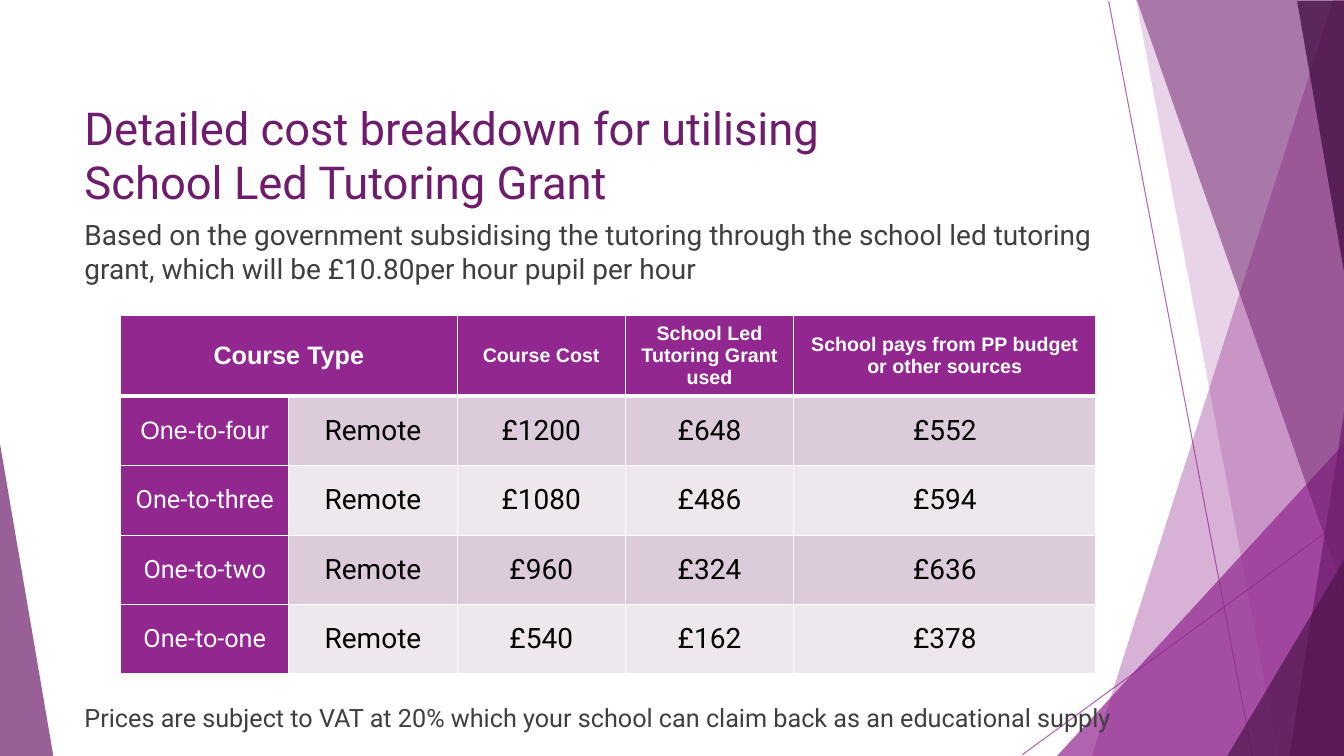
from dataclasses import dataclass
from typing import Any

from lxml.etree import SubElement
from pptx import Presentation
from pptx.dml.color import RGBColor
from pptx.enum.shapes import MSO_CONNECTOR as Link, MSO_SHAPE as Preset
from pptx.enum.text import MSO_ANCHOR as Anchor, PP_ALIGN as Align
from pptx.oxml.ns import qn
from pptx.util import Cm, Pt

WHITE = RGBColor(0xFF, 0xFF, 0xFF)
BLACK = RGBColor(0x00, 0x00, 0x00)
CHARCOAL = RGBColor(0x3F, 0x3F, 0x3F)
PURPLE = RGBColor(0x92, 0x27, 0x8F)
PLUM = RGBColor(0x6D, 0x1D, 0x6B)
AUBERGINE = RGBColor(0x49, 0x13, 0x47)
BANDS = (RGBColor(0xDB, 0xCB, 0xDB), RGBColor(0xEE, 0xE7, 0xEE))

SHARD_HEIGHT = 19.08


@dataclass(frozen=True)
class Ray:
    start: tuple[float, float]
    end: tuple[float, float]


@dataclass(frozen=True)
class Shard:
    """Four-sided panel with an upright right edge."""
    top_left: float
    right: float
    bottom_left: float
    color: RGBColor
    opacity: int
    top: float = 0


@dataclass(frozen=True)
class Wedge:
    """Right-angled triangle; apex is 0 at the left and 1 at the right."""
    left: float
    top: float
    width: float
    height: float
    color: RGBColor
    opacity: int
    apex: int = 1


RAYS = (
    Ray((27.94, 0.03), (31.57, 19.08)),
    Ray((36.47, 11.18), (25.76, 19.02)),
)
# From back to front
PANELS = (
    Shard(33.6, 36.47, 27.51, PURPLE, 36),
    Shard(28.63, 36.35, 32.23, PURPLE, 20),
    Wedge(26.62, 8.48, 9.73, 10.59, PURPLE, 72),
    Shard(28.65, 36.37, 35.33, PLUM, 50),
    Shard(35.53, 36.32, 32.49, PLUM, 70),
    Shard(32.69, 36.4, 35.99, AUBERGINE, 80, top=0.03),
    Wedge(30.91, 10.01, 5.41, 9.07, AUBERGINE, 66),
    Wedge(0, 11.18, 1.35, 7.9, PLUM, 70, apex=0),
)

TITLE = ("Detailed cost breakdown for utilising", "School Led Tutoring Grant")
BASIS = ("Based on the government subsidising the tutoring through the school led "
         "tutoring grant, which will be £10.80per hour pupil per hour")
VAT_NOTE = ("Prices are subject to VAT at 20% which your school can claim back "
            "as an educational supply")
COSTS = (
    ("Course Type", "", "Course Cost", "School Led Tutoring Grant used",
     "School pays from PP budget or other sources"),
    ("One-to-four", "Remote", "£1200", "£648", "£552"),
    ("One-to-three", "Remote", "£1080", "£486", "£594"),
    ("One-to-two", "Remote", "£960", "£324", "£636"),
    ("One-to-one", "Remote", "£540", "£162", "£378"),
)
COLUMN_WIDTHS = (4.24, 4.24, 4.24, 4.24, 7.62)
ROW_HEIGHTS = (1.88, 1.75, 1.75, 1.75, 1.75)

TITLE_FONT = {"name": "Roboto", "size": Pt(32.4)}
BASIS_FONT = {"name": "Roboto", "size": Pt(20)}
NOTE_FONT = {"name": "Roboto", "size": Pt(18)}
HEADER_FONT = {"name": "Arial", "size": Pt(14), "bold": True}
COURSE_TYPE_FONT = HEADER_FONT | {"size": Pt(18)}
FIRST_COURSE_FONT = {"name": "Arial", "size": Pt(18), "bold": False}
COURSE_FONT = {"name": "Roboto", "size": Pt(18), "bold": False}
VALUE_FONT = {"name": "Roboto", "size": Pt(20), "bold": False}


def set_font(font: Any, values: dict[str, Any], color: RGBColor) -> None:
    for attribute, value in values.items():
        setattr(font, attribute, value)
    font.color.rgb = color


def set_opacity(shape: Any, percent: int) -> None:
    for color in shape._element.iter(qn("a:srgbClr")):
        SubElement(color, qn("a:alpha"), val=str(percent * 1000))


def draw_ray(slide: Any, ray: Ray) -> None:
    line = slide.shapes.add_connector(
        Link.STRAIGHT, *(Cm(value) for value in (*ray.start, *ray.end)))
    line.line.color.rgb = PURPLE
    line.line.width = Pt(0.75)
    SubElement(line._element.spPr, qn("a:effectLst"))
    set_opacity(line, 70)


def draw_panel(slide: Any, panel: Shard | Wedge) -> None:
    if isinstance(panel, Wedge):
        shape = slide.shapes.add_shape(
            Preset.ISOSCELES_TRIANGLE, Cm(panel.left), Cm(panel.top),
            Cm(panel.width), Cm(panel.height))
        shape.adjustments[0] = panel.apex
    else:
        bottom = Cm(panel.top + SHARD_HEIGHT)
        outline = slide.shapes.build_freeform(Cm(panel.top_left), Cm(panel.top))
        outline.add_line_segments([
            (Cm(panel.right), Cm(panel.top)), (Cm(panel.right), bottom),
            (Cm(panel.bottom_left), bottom)])
        shape = outline.convert_to_shape()
    shape.shadow.inherit = False
    shape.fill.solid()
    shape.fill.fore_color.rgb = panel.color
    shape.line.fill.background()
    set_opacity(shape, panel.opacity)


def add_text_frame(slide: Any, left: float, top: float,
                   width: float, height: float) -> Any:
    frame = slide.shapes.add_textbox(Cm(left), Cm(top), Cm(width), Cm(height)).text_frame
    frame.word_wrap = True
    return frame


def set_borders(cell: Any, bottom: float) -> None:
    properties = cell._tc.get_or_add_tcPr()
    widths = {"a:lnL": 1, "a:lnR": 1, "a:lnT": 1, "a:lnB": bottom}
    for position, (side, width) in enumerate(widths.items()):
        border = SubElement(properties, qn(side), w=str(Pt(width)))
        fill = SubElement(border, qn("a:solidFill"))
        SubElement(fill, qn("a:srgbClr"), val=str(WHITE))
        properties.insert(position, border)


def cell_look(row: int, column: int) -> tuple[dict[str, Any], RGBColor, RGBColor]:
    if row == 0:
        return (HEADER_FONT if column else COURSE_TYPE_FONT), WHITE, PURPLE
    if column == 0:
        return (FIRST_COURSE_FONT if row == 1 else COURSE_FONT), WHITE, PURPLE
    return VALUE_FONT, BLACK, BANDS[(row - 1) % 2]


def draw_costs(slide: Any) -> None:
    costs = slide.shapes.add_table(
        len(COSTS), len(COLUMN_WIDTHS), Cm(3.04), Cm(7.95),
        Cm(sum(COLUMN_WIDTHS)), Cm(sum(ROW_HEIGHTS))).table
    for column, width in zip(costs.columns, COLUMN_WIDTHS):
        column.width = Cm(width)
    for row, height in zip(costs.rows, ROW_HEIGHTS):
        row.height = Cm(height)
    for row, entries in enumerate(COSTS):
        for column, entry in enumerate(entries):
            cell = costs.cell(row, column)
            font, color, fill = cell_look(row, column)
            cell.fill.solid()
            cell.fill.fore_color.rgb = fill
            set_borders(cell, bottom=1 if row else 3)
            cell.vertical_anchor = Anchor.MIDDLE
            paragraph = cell.text_frame.paragraphs[0]
            paragraph.alignment = Align.CENTER
            if entry:
                run = paragraph.add_run()
                run.text = entry
                set_font(run.font, font, color)
    costs.cell(0, 0).merge(costs.cell(0, 1))


def main() -> None:
    deck = Presentation()
    deck.slide_width, deck.slide_height = Cm(33.87), Cm(19.05)
    slide = deck.slides.add_slide(deck.slide_layouts[6])

    # Angled backdrop
    for ray in RAYS:
        draw_ray(slide, ray)
    for panel in PANELS:
        draw_panel(slide, panel)

    # Title on two lines
    heading = add_text_frame(slide, 1.88, 2.39, 30.84, 2.29).paragraphs[0]
    for number, words in enumerate(TITLE):
        if number:
            heading.add_line_break()
        run = heading.add_run()
        run.text = words
        set_font(run.font, TITLE_FONT, PLUM)

    # Basis above the table and VAT note below it
    body = add_text_frame(slide, 1.88, 5.36, 26.87, 14.22)
    basis, vat_note = body.paragraphs[0], body.add_paragraph()
    vat_note.space_before = Pt(298)
    for paragraph, words, font in ((basis, BASIS, BASIS_FONT),
                                   (vat_note, VAT_NOTE, NOTE_FONT)):
        run = paragraph.add_run()
        run.text = words
        set_font(run.font, font, CHARCOAL)

    # Cost table
    draw_costs(slide)
    deck.save("out.pptx")


if __name__ == "__main__":
    main()
